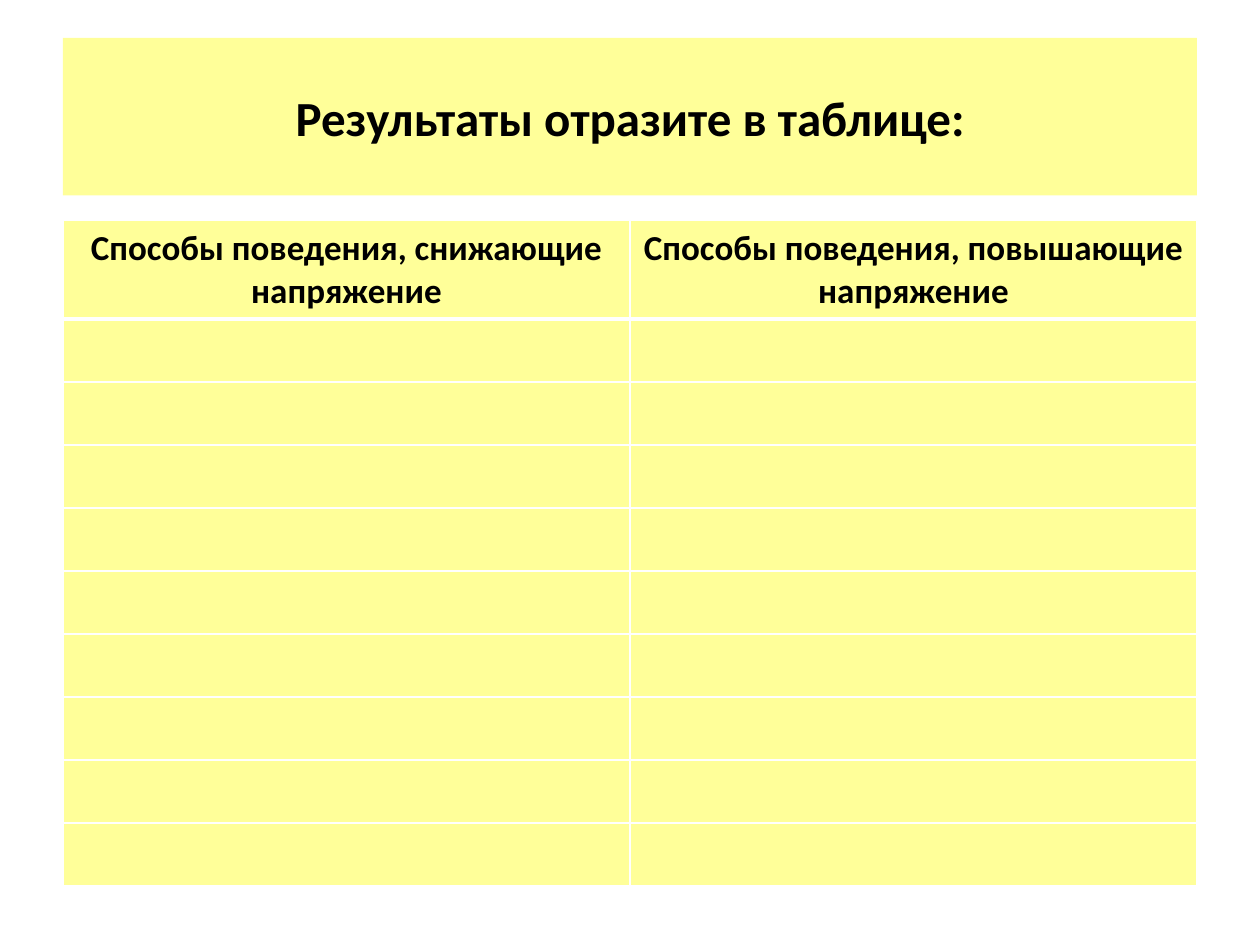
from lxml.etree import SubElement
from pptx import Presentation
from pptx.dml.color import RGBColor
from pptx.enum.shapes import MSO_SHAPE
from pptx.enum.text import MSO_ANCHOR, PP_ALIGN
from pptx.oxml.ns import qn
from pptx.util import Pt

COLORS = {"panel": "FFFF99", "text": "000000", "border": "FFFFFF"}
HEADERS = [
    "Способы поведения, снижающие\nнапряжение",
    "Способы поведения, повышающие\nнапряжение",
]
EMPTY_ROWS = 9


def fill_solid(target, color):
    """Give a shape or cell a solid fill."""
    target.fill.solid()
    target.fill.fore_color.rgb = RGBColor.from_string(COLORS[color])


def format_text(tf, size):
    """Centre the paragraphs and format their runs as bold Calibri."""
    for p in tf.paragraphs:
        p.alignment = PP_ALIGN.CENTER
        for r in p.runs:
            r.font.name = "Calibri"
            r.font.size = Pt(size)
            r.font.bold = True
            r.font.color.rgb = RGBColor.from_string(COLORS["text"])


def set_borders(cell, top, bottom):
    """Draw the four cell borders, with side borders one point wide."""
    tc_pr = cell._tc.get_or_add_tcPr()
    for side, width in (("L", 1), ("R", 1), ("T", top), ("B", bottom)):
        ln = SubElement(tc_pr, qn(f"a:ln{side}"), w=str(Pt(width)))
        fill = SubElement(ln, qn("a:solidFill"))
        SubElement(fill, qn("a:srgbClr"), val=COLORS["border"])


def add_title(s, left, top, width, height):
    """Add the title panel."""
    sp = s.shapes.add_shape(
        MSO_SHAPE.RECTANGLE, Pt(left), Pt(top), Pt(width), Pt(height)
    )
    sp.shadow.inherit = False
    sp.line.fill.background()
    fill_solid(sp, "panel")
    tf = sp.text_frame
    tf.word_wrap = True
    tf.vertical_anchor = MSO_ANCHOR.MIDDLE
    tf.text = "Результаты отразите в таблице:"
    format_text(tf, 28)


def add_results_table(s, left, top, width, height, row_height=36):
    """Add the two-column results table with blank rows to fill in."""
    table = s.shapes.add_table(
        EMPTY_ROWS + 1, len(HEADERS), Pt(left), Pt(top), Pt(width), Pt(height)
    ).table
    for column in table.columns:
        column.width = Pt(width / len(HEADERS))
    for i, row in enumerate(table.rows):
        row.height = Pt(row_height if i else height - EMPTY_ROWS * row_height)
        for cell, header in zip(row.cells, HEADERS):
            set_borders(cell, 3 if i == 1 else 1, 1 if i else 3)
            fill_solid(cell, "panel")
            if i == 0:
                cell.text_frame.text = header
                format_text(cell.text_frame, 20)


def main():
    """Build and save the slide."""
    prs = Presentation()
    prs.slide_width, prs.slide_height = Pt(720), Pt(540)
    s = prs.slides.add_slide(prs.slide_layouts[6])
    add_title(s, 36, 21.6, 648, 90)
    add_results_table(s, 36, 126, 648, 379)
    prs.save("out.pptx")


if __name__ == "__main__":
    main()
